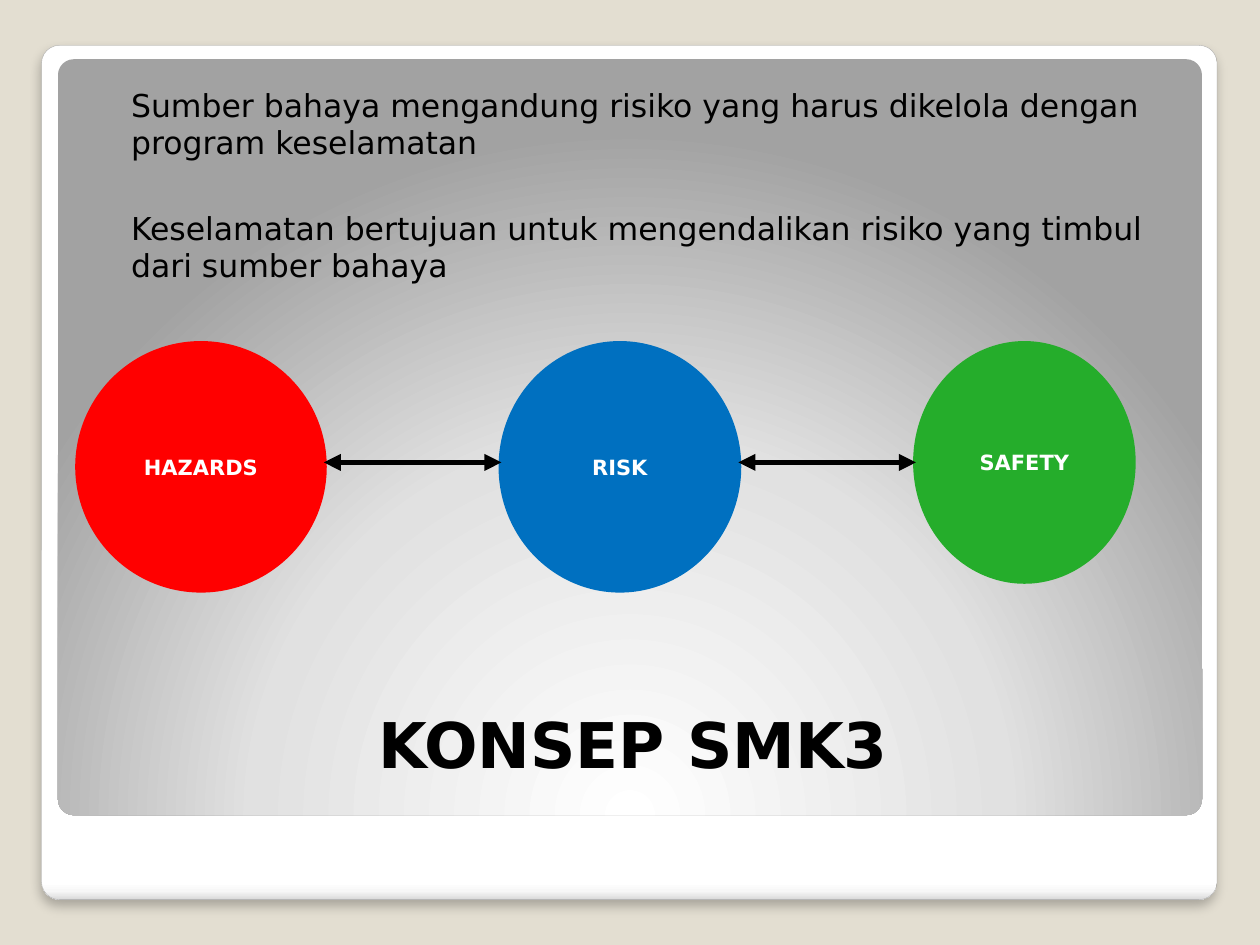
from dataclasses import dataclass

from lxml.etree import SubElement
from pptx import Presentation
from pptx.dml.color import RGBColor
from pptx.enum.shapes import MSO_CONNECTOR, MSO_SHAPE
from pptx.enum.text import MSO_ANCHOR, PP_ALIGN
from pptx.oxml.ns import qn
from pptx.util import Inches, Pt


@dataclass(frozen=True)
class Theme:
    font: str = "DejaVu Sans"
    background: str = "E3DED1"
    ink: str = "000000"
    label: str = "FFFFFF"
    frame_edge: str = "A4A4A4"
    hazards: str = "FF0000"
    risk: str = "0070C0"
    safety: str = "25AD2B"
    frame_stops: tuple = ((0, "FFFFFF"), (98, "FFFFFF"), (99, "F7F7F7"), (100, "DADADA"))
    panel_stops: tuple = ((0, "FFFFFF"), (55, "E1E1E1"), (100, "A2A2A2"))
    title_size: int = 36
    body_size: int = 18
    label_size: int = 12


def add_xml(parent, tag, **attributes):
    return SubElement(parent, qn(tag), {key: str(value) for key, value in attributes.items()})


class SlideBuilder:
    def __init__(self, slide, theme):
        self.slide = slide
        self.theme = theme

    def background(self):
        fill = self.slide.background.fill
        fill.solid()
        fill.fore_color.rgb = RGBColor.from_string(self.theme.background)

    def style_paragraph(self, paragraph, size, color, bold=False, align=PP_ALIGN.CENTER):
        paragraph.alignment = align
        font = paragraph.font
        font.name, font.size, font.bold = self.theme.font, Pt(size), bold
        font.color.rgb = RGBColor.from_string(color)

    def shape(self, kind, left, top, width, height):
        shape = self.slide.shapes.add_shape(
            kind, Inches(left), Inches(top), Inches(width), Inches(height))
        shape.shadow.inherit = False
        return shape

    def rounded_panel(self, left, top, width, height, stops):
        """Add a rounded rectangle; return it with its gradient still lacking a direction."""
        panel = self.shape(MSO_SHAPE.ROUNDED_RECTANGLE, left, top, width, height)
        panel.adjustments[0] = 0.021
        panel.line.fill.background()
        panel.fill.gradient()
        gradient = panel._element.spPr.find(qn("a:gradFill"))
        for child in list(gradient):
            gradient.remove(child)
        stop_list = add_xml(gradient, "a:gsLst")
        for position, color in stops:
            stop = add_xml(stop_list, "a:gs", pos=position * 1000)
            add_xml(stop, "a:srgbClr", val=color)
        return panel, gradient

    def frame(self, *box):
        frame, gradient = self.rounded_panel(*box, self.theme.frame_stops)
        add_xml(gradient, "a:lin", ang=90 * 60000, scaled=0)
        frame.line.color.rgb = RGBColor.from_string(self.theme.frame_edge)
        frame.line.width = Pt(0.16)
        effects = frame._element.spPr.find(qn("a:effectLst"))
        shadow = add_xml(effects, "a:outerShdw", blurRad=Pt(6), dist=Pt(4),
                         dir=90 * 60000, algn="t", rotWithShape=0)
        shadow_color = add_xml(shadow, "a:srgbClr", val=self.theme.ink)
        add_xml(shadow_color, "a:alpha", val=25000)

    def glow_panel(self, *box):
        """Add the panel whose light spreads from its bottom centre."""
        _, gradient = self.rounded_panel(*box, self.theme.panel_stops)
        glow = add_xml(gradient, "a:path", path="circle")
        add_xml(glow, "a:fillToRect", l=50000, t=175000, r=50000, b=-75000)

    def text_box(self, left, top, width, height, anchor):
        frame = self.slide.shapes.add_textbox(
            Inches(left), Inches(top), Inches(width), Inches(height)).text_frame
        frame.word_wrap = True
        frame.vertical_anchor = anchor
        return frame

    def title(self, text, *box):
        paragraph = self.text_box(*box, MSO_ANCHOR.BOTTOM).paragraphs[0]
        paragraph.text = text
        self.style_paragraph(paragraph, self.theme.title_size, self.theme.ink, bold=True)

    def body(self, statements, *box):
        frame = self.text_box(*box, MSO_ANCHOR.TOP)
        frame.margin_left, frame.margin_top = Inches(0.2), Inches(0.1)
        for index, statement in enumerate(statements):
            paragraph = frame.add_paragraph() if index else frame.paragraphs[0]
            paragraph.text = statement
            paragraph.space_before = Pt(27 if index else 2.5)
            paragraph._p.get_or_add_pPr().set("marL", str(Inches(0.29)))
            self.style_paragraph(paragraph, self.theme.body_size, self.theme.ink,
                                 align=PP_ALIGN.LEFT)

    def circle(self, text, color, *box):
        circle = self.shape(MSO_SHAPE.OVAL, *box)
        circle.fill.solid()
        circle.fill.fore_color.rgb = RGBColor.from_string(color)
        circle.line.color.rgb = RGBColor.from_string(color)
        circle.line.width = Pt(3.35)
        circle.text_frame.vertical_anchor = MSO_ANCHOR.MIDDLE
        paragraph = circle.text_frame.paragraphs[0]
        paragraph.text = text
        self.style_paragraph(paragraph, self.theme.label_size, self.theme.label, bold=True)

    def double_arrow(self, start, end, y):
        arrow = self.slide.shapes.add_connector(
            MSO_CONNECTOR.STRAIGHT, Inches(start), Inches(y), Inches(end), Inches(y))
        arrow.line.color.rgb = RGBColor.from_string(self.theme.ink)
        arrow.line.width = Pt(3.25)
        outline = arrow.line._get_or_add_ln()
        add_xml(outline, "a:headEnd", type="triangle")
        add_xml(outline, "a:tailEnd", type="triangle")
        add_xml(arrow._element.spPr, "a:effectLst")


def main():
    presentation = Presentation()
    presentation.slide_width, presentation.slide_height = Inches(10), Inches(7.5)
    theme = Theme()
    builder = SlideBuilder(
        presentation.slides.add_slide(presentation.slide_layouts[6]), theme)

    builder.background()
    builder.frame(0.33, 0.36, 9.33, 6.78)
    builder.glow_panel(0.46, 0.47, 9.08, 6)
    builder.title("KONSEP SMK3", 0.55, 5.45, 8.95, 0.8)
    builder.body(
        ["Sumber bahaya mengandung risiko yang harus dikelola dengan program keselamatan",
         "Keselamatan bertujuan untuk mengendalikan risiko yang timbul dari sumber bahaya"],
        0.55, 0.58, 8.95, 4.58)

    concepts = [
        ("HAZARDS", theme.hazards, 0.62, 1.95, 1.95),
        ("RISK", theme.risk, 3.98, 1.88, 1.95),
        ("SAFETY", theme.safety, 7.27, 1.72, 1.88),
    ]
    for name, color, left, width, height in concepts:
        builder.circle(name, color, left, 2.73, width, height)
    for (_, _, left, width, _), (_, _, next_left, _, _) in zip(concepts, concepts[1:]):
        builder.double_arrow(left + width, next_left, 3.67)

    presentation.save("out.pptx")


if __name__ == "__main__":
    main()
